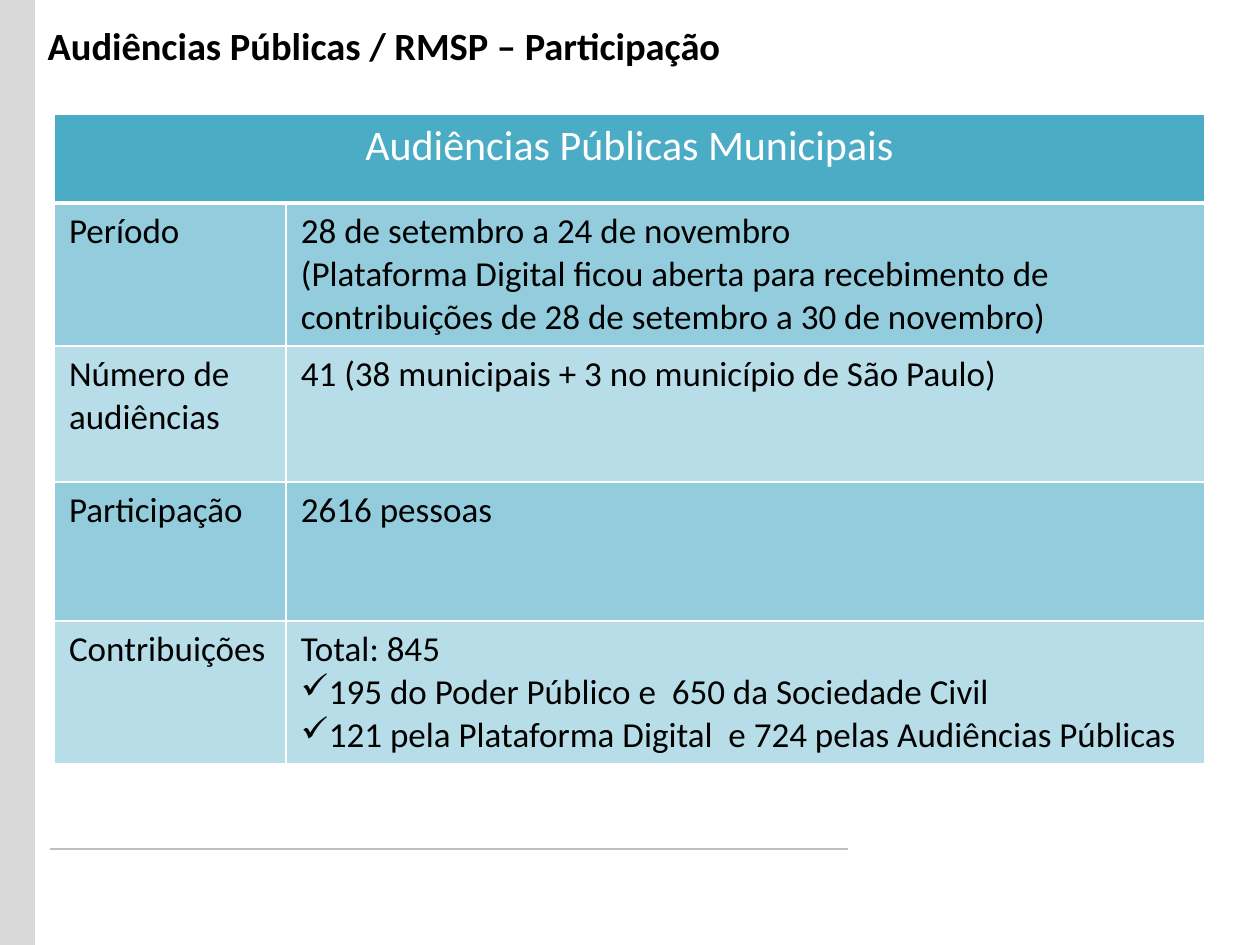
from pptx import Presentation
from pptx.dml.color import RGBColor
from pptx.enum.shapes import MSO_CONNECTOR, MSO_SHAPE
from pptx.enum.text import MSO_ANCHOR, PP_ALIGN
from pptx.oxml.ns import qn
from pptx.util import Pt
from lxml.etree import SubElement

EMU_PER_PX = 914400 / 126
FONT = "Calibri"
COLORS = {
    "text": "000000",
    "white": "FFFFFF",
    "sidebar": "D9D9D9",
    "rule": "BFBFBF",
    "header": "4BACC6",
    "band_dark": "93CDDD",
    "band_light": "B7DEE8",
}
HEADER = "Audiências Públicas Municipais"
CHECK = "✓"
# Label and paragraphs of each row; a leading check mark makes a bullet
ROWS = [
    ("Período", [
        "28 de setembro a 24 de novembro",
        "(Plataforma Digital ficou aberta para recebimento de "
        "contribuições de 28 de setembro a 30 de novembro)",
    ]),
    ("Número de audiências", ["41 (38 municipais + 3 no município de São Paulo)"]),
    ("Participação", ["2616 pessoas"]),
    ("Contribuições", [
        "Total: 845",
        CHECK + "195 do Poder Público e  650 da Sociedade Civil",
        CHECK + "121 pela Plataforma Digital  e 724 pelas Audiências Públicas",
    ]),
]
COLUMN_WIDTHS = [232, 919]
ROW_HEIGHTS = [89, 143, 136, 139, 143]


def px(length):
    return round(length * EMU_PER_PX)


def color(name):
    return RGBColor.from_string(COLORS[name])


def add_check(paragraph, indent=28):
    properties = paragraph._p.get_or_add_pPr()
    properties.set("marL", str(px(indent)))
    properties.set("indent", str(-px(indent)))
    SubElement(properties, qn("a:buChar"), char=CHECK)


def write(frame, lines, size=20, ink="text", bold=False, align=PP_ALIGN.LEFT):
    frame.word_wrap = True
    for index, line in enumerate(lines):
        paragraph = frame.paragraphs[0] if index == 0 else frame.add_paragraph()
        if line.startswith(CHECK):
            add_check(paragraph)
        paragraph.alignment = align
        run = paragraph.add_run()
        run.text = line.removeprefix(CHECK)
        run.font.name = FONT
        run.font.size = Pt(size)
        run.font.bold = bold
        run.font.color.rgb = color(ink)


def style_cell(cell, fill, bottom_width=1):
    cell.margin_left = cell.margin_right = px(15)
    cell.margin_top = cell.margin_bottom = px(7)
    cell.vertical_anchor = MSO_ANCHOR.TOP
    # Borders come before the fill in the cell properties
    properties = cell._tc.get_or_add_tcPr()
    for side in "LRTB":
        width = bottom_width if side == "B" else 1
        border = SubElement(properties, qn(f"a:ln{side}"), w=str(Pt(width)))
        solid = SubElement(border, qn("a:solidFill"))
        SubElement(solid, qn("a:srgbClr"), val=COLORS["white"])
    cell.fill.solid()
    cell.fill.fore_color.rgb = color(fill)


def add_frame(slide, left, top, width, height):
    # Side strip
    sidebar = slide.shapes.add_shape(
        MSO_SHAPE.RECTANGLE, px(left), px(top), px(35), px(height))
    sidebar.shadow.inherit = False
    sidebar.fill.solid()
    sidebar.fill.fore_color.rgb = color("sidebar")
    sidebar.line.fill.background()

    # Footer rule
    rule_y = px(top + height - 96)
    rule = slide.shapes.add_connector(
        MSO_CONNECTOR.STRAIGHT, px(left + 848), rule_y, px(left + 50), rule_y)
    rule.line.color.rgb = color("rule")
    rule.line.width = Pt(0.75)
    SubElement(rule._element.spPr, qn("a:effectLst"))


def place_title(slide, left, top, width, height):
    title = slide.shapes.title
    title.left, title.top = px(left), px(top)
    title.width, title.height = px(width), px(height)
    title.text_frame.vertical_anchor = MSO_ANCHOR.MIDDLE
    write(title.text_frame, ["Audiências Públicas / RMSP – Participação"],
          size=22, bold=True)


def add_hearings_table(slide, left, top):
    hearings = slide.shapes.add_table(
        len(ROW_HEIGHTS), len(COLUMN_WIDTHS), px(left), px(top),
        px(sum(COLUMN_WIDTHS)), px(sum(ROW_HEIGHTS))).table
    hearings.first_row = hearings.horz_banding = False
    for column, width in zip(hearings.columns, COLUMN_WIDTHS):
        column.width = px(width)
    for row, height in zip(hearings.rows, ROW_HEIGHTS):
        row.height = px(height)

    # Header across both columns
    header = hearings.cell(0, 0)
    header.merge(hearings.cell(0, 1))
    for cell in hearings.rows[0].cells:
        style_cell(cell, "header", bottom_width=3)
    write(header.text_frame, [HEADER], size=24, ink="white", align=PP_ALIGN.CENTER)

    # Banded body
    for number, (label, details) in enumerate(ROWS, start=1):
        band = "band_dark" if number % 2 else "band_light"
        for column, lines in enumerate([[label], details]):
            cell = hearings.cell(number, column)
            style_cell(cell, band)
            write(cell.text_frame, lines)


def main():
    deck = Presentation()
    deck.slide_width, deck.slide_height = px(1260), px(945)
    slide = deck.slides.add_slide(deck.slide_layouts[5])
    add_frame(slide, 0, 0, 1260, 945)
    place_title(slide, 35, 16, 1211, 59)
    add_hearings_table(slide, 54, 114)
    deck.save("out.pptx")


if __name__ == "__main__":
    main()
